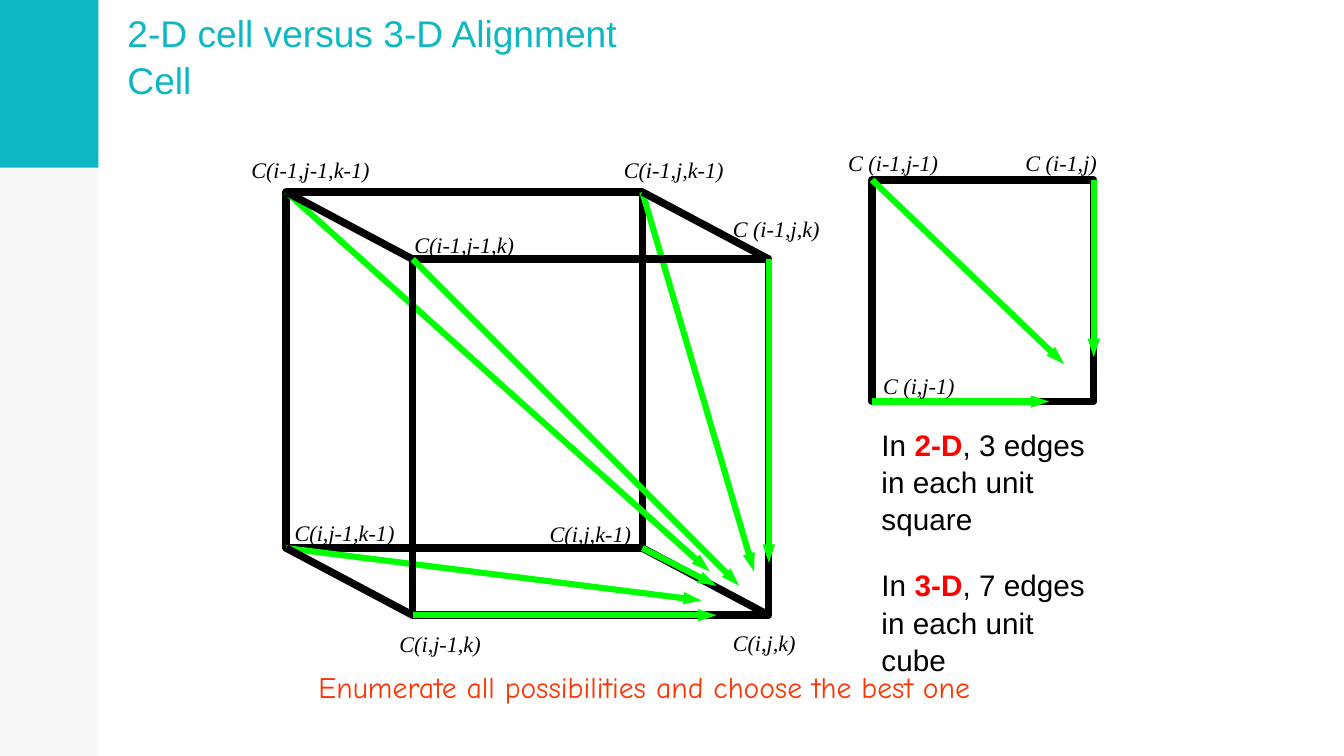
from lxml.etree import SubElement
from pptx import Presentation
from pptx.dml.color import RGBColor
from pptx.enum.shapes import MSO_CONNECTOR as Link, MSO_SHAPE as Preset
from pptx.enum.text import MSO_ANCHOR as Anchor
from pptx.oxml.ns import qn
from pptx.util import Cm, Pt

BLACK = RGBColor(0, 0, 0)
GREEN = RGBColor(0, 255, 0)
RED = RGBColor(255, 0, 0)
ORANGE = RGBColor(0xFF, 0x33, 0x00)
TEAL = RGBColor(0x0D, 0xB7, 0xC4)
PALE = RGBColor(0xF7, 0xF7, 0xF7)
EDGE, ARROW = 4, 3.3
TAB = 7.04


def add_bar(slide, left, top, width, height, color):
    bar = slide.shapes.add_shape(Preset.RECTANGLE, Cm(left), Cm(top), Cm(width), Cm(height))
    bar.shadow.inherit = False
    bar.fill.solid()
    bar.fill.fore_color.rgb = color
    bar.line.fill.background()


def add_square(slide, left, top, side):
    square = slide.shapes.add_shape(Preset.RECTANGLE, Cm(left), Cm(top), Cm(side), Cm(side))
    square.shadow.inherit = False
    square.fill.background()
    square.line.color.rgb = BLACK
    square.line.width = Pt(EDGE)


def add_line(slide, origin, start, end, color, width):
    x, y = origin
    link = slide.shapes.add_connector(
        Link.STRAIGHT, Cm(x + start[0]), Cm(y + start[1]), Cm(x + end[0]), Cm(y + end[1]))
    link.line.color.rgb = color
    link.line.width = Pt(width)
    SubElement(link._element.spPr, qn("a:effectLst"))
    return link


def add_arrows(slide, origin, arrows):
    for start, end in arrows:
        arrow = add_line(slide, origin, start, end, GREEN, ARROW)
        SubElement(arrow.line._get_or_add_ln(), qn("a:tailEnd"), type="triangle", w="sm", len="med")


def add_text(slide, left, top, width, height, runs, size, font, color, italic=False):
    box = slide.shapes.add_textbox(Cm(left), Cm(top), Cm(width), Cm(height))
    frame = box.text_frame
    frame.word_wrap = True
    frame.margin_left = frame.margin_right = frame.margin_top = frame.margin_bottom = 0
    paragraph = frame.paragraphs[0]
    if any("\t" in text for text, _ in runs):
        tabs = SubElement(paragraph._p.get_or_add_pPr(), qn("a:tabLst"))
        SubElement(tabs, qn("a:tab"), pos=str(Cm(TAB)), algn="l")
    paragraph.font.size = Pt(size)
    paragraph.font.name = font
    paragraph.font.italic = italic
    for text, accent in runs:
        run = paragraph.add_run()
        run.text = text
        run.font.color.rgb = accent or color
        if accent:
            run.font.bold = True
    return frame


def add_labels(slide, origin, labels):
    for text, x, y, width in labels:
        add_text(slide, origin[0] + x, origin[1] + y, width, 0.51,
                 [(text, None)], 11.9, "Times New Roman", BLACK, italic=True)


def add_sidebar(slide, width, height):
    add_bar(slide, 0, 0, width, height, PALE)
    add_bar(slide, 0, 0, width, 3.17, TEAL)


def add_title(slide, left, top, width, height):
    frame = add_text(slide, left, top, width, height,
                     [("2-D cell versus 3-D Alignment Cell", None)], 19.9, "Arial", TEAL)
    frame.vertical_anchor = Anchor.BOTTOM
    frame.paragraphs[0].line_spacing = 1.05


def add_cube_cell(slide, left, top, side):
    origin = left, top
    dx, dy = 2.39, 1.27
    back = [(0, 0), (side, 0), (0, side), (side, side)]
    front = [(x + dx, y + dy) for x, y in back]

    add_square(slide, left, top, side)
    add_arrows(slide, origin, [(back[1], (8.84, 7.17)), (back[0], (8, 7.17)),
                               (back[2], (7.85, 7.72))])
    add_square(slide, left + dx, top + dy, side)
    for start, end in zip(back, front):
        add_line(slide, origin, start, end, BLACK, EDGE)
    add_arrows(slide, origin, [(back[3], (8.13, 7.44)), (front[2], (8.13, 8)),
                               (front[1], (9.12, 7.01)), (front[0], (8.56, 7.44))])
    add_labels(slide, origin, [
        ("C(i-1,j-1,k-1)\tC(i-1,j,k-1)", -0.66, -0.68, 9.2),
        ("C(i,j-1,k)", 2.14, 8.29, 1.8),
        ("C(i-1,j-1,k)", 2.42, 0.74, 2.2),
        ("C (i-1,j,k)", 8.44, 0.44, 2),
        ("C(i,j,k)", 8.44, 8.26, 1.5),
        ("C(i,j,k-1)", 4.98, 6.2, 1.8),
        ("C(i,j-1,k-1)", 0.16, 6.18, 2.2),
    ])


def add_square_cell(slide, left, top, side):
    origin = left, top
    add_square(slide, left, top, side)
    add_arrows(slide, origin, [((side, 0), (side, 3.35)), ((0, 0), (3.63, 3.48)),
                               ((0, side), (3.35, side))])
    add_labels(slide, origin, [
        ("C (i-1,j-1)", -0.45, -0.58, 2),
        ("C (i-1,j)", 2.9, -0.58, 1.6),
        ("C (i,j-1)", 0.21, 3.64, 1.6),
    ])


def add_edge_counts(slide, left, top, width, step):
    counts = [("2-D", 3, "square"), ("3-D", 7, "cube")]
    for row, (dimension, edges, unit) in enumerate(counts):
        runs = [("In ", None), (dimension, RED), (f", {edges} edges in each unit {unit}", None)]
        frame = add_text(slide, left, top + row * step, width, 2.03, runs, 15.9, "Arial", BLACK)
        frame.paragraphs[0].line_spacing = 1.05


def add_conclusion(slide, left, top, width, height):
    add_text(slide, left, top, width, height,
             [("Enumerate all possibilities and choose the best one", None)],
             15.9, "Comic Neue", ORANGE)


def main():
    deck = Presentation()
    deck.slide_width, deck.slide_height = Cm(25.4), Cm(14.29)
    slide = deck.slides.add_slide(deck.slide_layouts[6])
    add_sidebar(slide, 1.86, 14.29)
    add_title(slide, 2.41, 0.69, 10.03, 1.24)
    add_cube_cell(slide, 5.41, 3.63, 6.73)
    add_square_cell(slide, 16.48, 3.4, 4.19)
    add_edge_counts(slide, 16.66, 8.03, 4.1, 2.66)
    add_conclusion(slide, 6.02, 12.64, 13.36, 0.69)
    deck.save("out.pptx")


if __name__ == "__main__":
    main()
